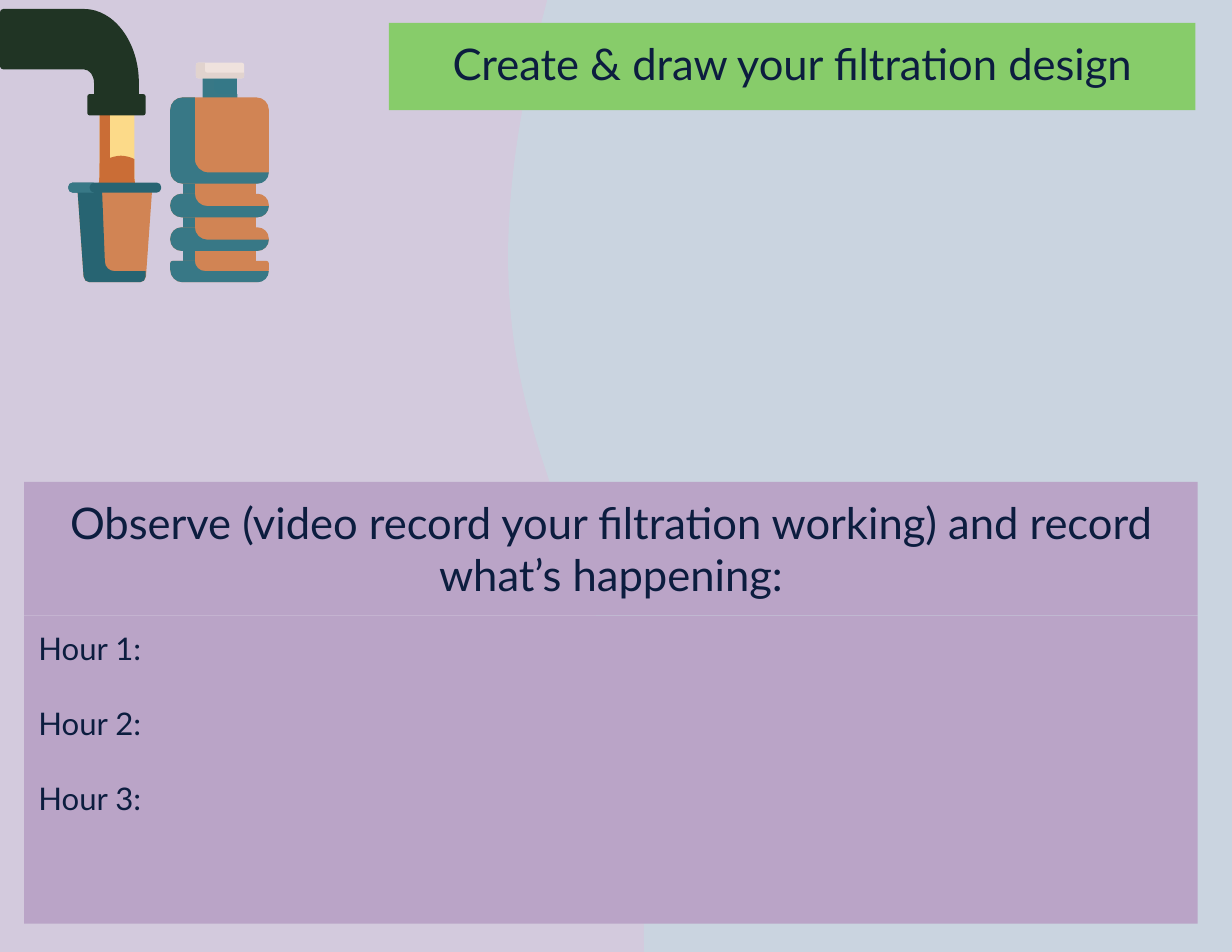
import lxml.etree
import pptx
import pptx.dml.color
import pptx.enum.shapes
import pptx.enum.text
import pptx.oxml.ns
import pptx.util

Cm = pptx.util.Cm
Pt = pptx.util.Pt
RGB = pptx.dml.color.RGBColor
KIND = pptx.enum.shapes.MSO_SHAPE
ALIGN = pptx.enum.text.PP_ALIGN
qn = pptx.oxml.ns.qn

LILAC = RGB(0xD3, 0xCA, 0xDD)
MINT = RGB(0xB2, 0xF2, 0xEA)
GREEN = RGB(0x87, 0xCC, 0x6A)
MAUVE = RGB(0xBA, 0xA4, 0xC7)
NAVY = RGB(0x0C, 0x1D, 0x3F)
SUN = RGB(0xFC, 0xDA, 0x89)
RUST = RGB(0xCA, 0x6D, 0x36)
IRON = RGB(0x20, 0x34, 0x24)
CLAY = RGB(0xD1, 0x84, 0x54)
TEAL = RGB(0x38, 0x78, 0x86)
BLUE = RGB(0x35, 0x78, 0x87)
DEEP = RGB(0x27, 0x64, 0x72)
CREAM = RGB(0xEF, 0xE2, 0xDD)
SAND = RGB(0xE1, 0xD3, 0xCE)
UNIT = 2.54 / 100


def paint(shape, color):
    """Give a shape a flat fill with no line or shadow."""
    shape.shadow.inherit = False
    shape.fill.solid()
    shape.fill.fore_color.rgb = color
    shape.line.fill.background()


def add_wave(slide):
    """Add the translucent wave on the right of the background."""
    wave = slide.shapes.add_shape(
        KIND.FLOWCHART_DOCUMENT, Cm(8.82), Cm(2.49), Cm(21.62), Cm(16.64))
    wave.rotation = 90
    paint(wave, MINT)
    tone = wave.fill._xPr.find(".//" + qn("a:srgbClr"))
    lxml.etree.SubElement(tone, qn("a:alpha"), val="26000")


def add_panel(slide, area, color, lines, size, align, gap=0):
    """Add a filled panel with one paragraph per line of text."""
    panel = slide.shapes.add_shape(KIND.RECTANGLE, *[Cm(n) for n in area])
    paint(panel, color)
    frame = panel.text_frame
    frame.word_wrap = True
    frame.vertical_anchor = pptx.enum.text.MSO_ANCHOR.TOP
    frame.margin_left = frame.margin_right = Cm(0.32)
    frame.margin_top = frame.margin_bottom = Cm(0.32)
    for row, line in enumerate(lines):
        para = frame.add_paragraph() if row else frame.paragraphs[0]
        para.alignment = align
        if row:
            para.space_before = Pt(gap)
        run = para.add_run()
        run.text = line
        run.font.name = "Lato"
        run.font.size = Pt(size)
        run.font.color.rgb = NAVY


def toward(start, end, reach):
    """Return the point that lies a given reach from start toward end."""
    dx, dy = end[0] - start[0], end[1] - start[1]
    part = reach / (dx * dx + dy * dy) ** 0.5
    return start[0] + dx * part, start[1] + dy * part


def bend(prior, spot, after):
    """Return the four curve points that round one corner."""
    near, far = spot[2] if isinstance(spot[2], tuple) else (spot[2], spot[2])
    return [toward(spot, prior, near), toward(spot, prior, near * 0.45),
            toward(spot, after, far * 0.45), toward(spot, after, far)]


def add_form(group, color, *spots):
    """Draw a closed outline whose corners may carry a radius."""
    dots, marks = [], []
    for i, spot in enumerate(spots):
        if len(spot) == 2:
            dots.append(spot)
        else:
            marks.append(len(dots))
            dots += bend(spots[i - 1], spot, spots[(i + 1) % len(spots)])
    dots = [(Cm(x * UNIT), Cm(y * UNIT)) for x, y in dots]
    pen = group.shapes.build_freeform(*dots[0])
    pen.add_line_segments(dots[1:], close=True)
    form = pen.convert_to_shape()
    paint(form, color)
    lines = form._element.findall(".//" + qn("a:lnTo"))
    for mark in marks:
        curve = lxml.etree.Element(qn("a:cubicBezTo"))
        lines[mark].addprevious(curve)
        for line in lines[mark:mark + 3]:
            curve.append(line[0])
            line.getparent().remove(line)


def add_box(group, color, left, top, right, low, head=0, foot=0):
    """Draw a box with rounded upper and lower corners."""
    spots = [(left, top, head), (right, top, head),
             (right, low, foot), (left, low, foot)]
    add_form(group, color, *[s if s[2] else s[:2] for s in spots])


def add_band(group, top, low, head, foot):
    """Draw one ring of the bottle with its shaded side."""
    add_box(group, CLAY, 152, top, 240, low, head, foot)
    edge = low - 10
    add_form(group, TEAL, (174, top), (174, edge, min(12, edge - top)),
             (240, edge), (240, low, 10), (152, low, foot), (152, top, head))


def add_pipe(group):
    """Draw the pipe and the water that runs from it."""
    left = (89, 176, (14, 19))
    right = (120, 176, (19, 13))
    add_form(group, SUN, (120, 91), right, (132, 184), (76, 184), left, (89, 91))
    add_form(group, RUST, (98, 91), (98, 172, (12, 14)), (90, 184),
             (76, 184), left, (89, 91))
    add_form(group, IRON, (0, 8, 3), (124, 8, (49, 66)), (124, 96),
             (84, 96), (84, 62, (12, 9)), (0, 62, 3))
    add_box(group, IRON, 78, 84, 130, 103, 2, 2)
    add_form(group, RUST, (89, 146), (94, 143), (101, 139, 7), (114, 139, 6),
             (120, 142), right, (132, 184), (76, 184), left)


def add_bottle(group):
    """Draw the ringed bottle and its cap."""
    add_box(group, CLAY, 163, 154, 229, 236)
    add_box(group, TEAL, 163, 154, 174, 236)
    add_box(group, BLUE, 181, 63, 212, 94)
    add_form(group, TEAL, (191, 63), (191, 84, 6), (212, 84),
             (212, 94), (181, 94), (181, 63))
    for band in ((87, 164, 11, 11), (233, 252, 2, 11),
                 (173, 194, 10, 10), (203, 224, 10, 10)):
        add_band(group, *band)
    add_box(group, CREAM, 175, 56, 218, 70, 2, 2)
    add_form(group, SAND, (183, 56), (183, 65, 2), (218, 65), (218, 70, 2),
             (175, 70, 2), (175, 56, 2))


def add_cup(group):
    """Draw the cup under the pipe."""
    add_form(group, CLAY, (136, 167), (130, 252, 5), (75, 252, 5), (69, 167))
    add_form(group, DEEP, (91, 167), (94, 242, 8), (130, 242),
             (130, 252, 5), (75, 252, 5), (69, 167))
    add_box(group, DEEP, 61, 163, 144, 172, 4, 4)
    add_form(group, TEAL, (84, 163), (80, 163, 4), (80, 172, 4), (84, 172),
             (61, 172, 4), (61, 163, 4))


def main():
    """Build the filtration slide and save it."""
    deck = pptx.Presentation()
    deck.slide_width, deck.slide_height = Cm(27.94), Cm(21.59)
    slide = deck.slides.add_slide(deck.slide_layouts[6])
    slide.background.fill.solid()
    slide.background.fill.fore_color.rgb = LILAC
    add_wave(slide)
    add_panel(slide, (8.82, 0.52, 18.29, 1.98), GREEN,
              ["Create & draw your filtration design"], 28, ALIGN.CENTER)
    add_panel(slide, (0.55, 13.96, 26.61, 6.99), MAUVE,
              [f"Hour {n}:" for n in (1, 2, 3)], 20, ALIGN.LEFT, 24)
    add_panel(slide, (0.55, 10.93, 26.61, 3.03), MAUVE,
              ["Observe (video record your filtration working) "
               "and record what’s happening:"], 28, ALIGN.CENTER)
    group = slide.shapes.add_group_shape()
    for draw in (add_pipe, add_bottle, add_cup):
        draw(group)
    deck.save("out.pptx")


if __name__ == "__main__":
    main()
